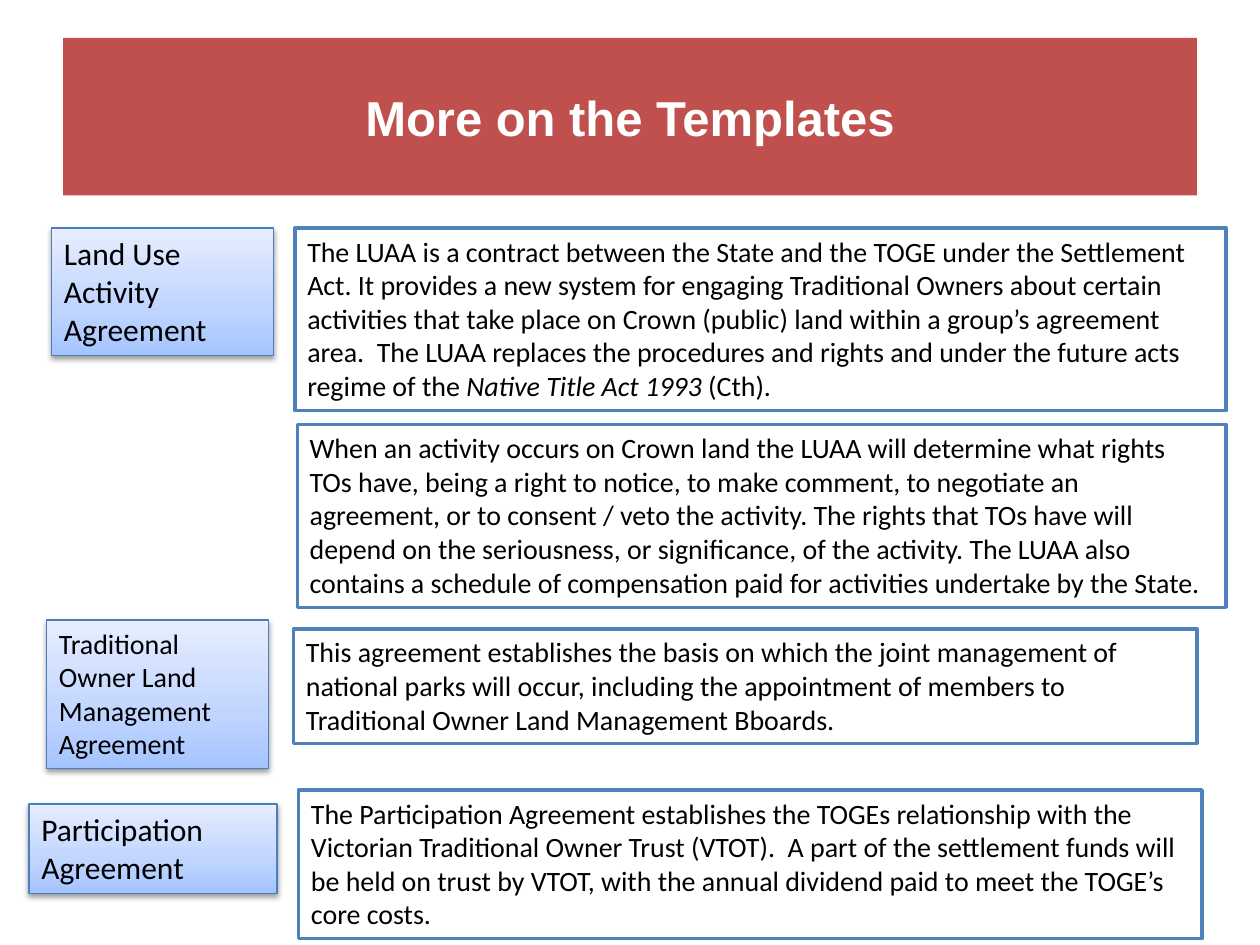
import copy

import pptx
import pptx.dml.color
import pptx.enum.dml
import pptx.enum.shapes
import pptx.enum.text
import pptx.oxml
import pptx.oxml.ns
import pptx.util

RGBColor = pptx.dml.color.RGBColor
BLACK = RGBColor(0x00, 0x00, 0x00)
WHITE = RGBColor(0xFF, 0xFF, 0xFF)
RED = RGBColor(0xC0, 0x50, 0x4D)
BLUE = RGBColor(0x4F, 0x81, 0xBD)
LABEL_EDGE = RGBColor(0x4B, 0x7E, 0xBC)
LABEL_STOPS = [
    (0, RGBColor(0xA4, 0xC4, 0xFF)),
    (0.35, RGBColor(0xBF, 0xD4, 0xFF)),
    (1, RGBColor(0xE6, 0xEE, 0xFF)),
]
COLUMNS, ROWS = 100, 75
SOFT_SHADOW = (
    f'<a:outerShdw {pptx.oxml.ns.nsdecls("a")} blurRad="40000" dist="20000" '
    'dir="5400000" rotWithShape="0"><a:srgbClr val="000000">'
    '<a:alpha val="38000"/></a:srgbClr></a:outerShdw>'
)
LEFT = pptx.enum.text.PP_ALIGN.LEFT
CENTER = pptx.enum.text.PP_ALIGN.CENTER


def write(frame, *pieces, size=16, font="Calibri", color=BLACK, bold=False, align=LEFT):
    frame.word_wrap = True
    paragraph = frame.paragraphs[0]
    paragraph.alignment = align
    for piece in pieces:
        text, italic = piece if isinstance(piece, tuple) else (piece, False)
        run = paragraph.add_run()
        run.text = text
        run.font.size = pptx.util.Pt(size)
        run.font.name = font
        run.font.color.rgb = color
        run.font.bold = bold
        run.font.italic = italic


class AgreementSlide:
    def __init__(self, deck):
        self.column = deck.slide_width / COLUMNS
        self.row = deck.slide_height / ROWS
        self.slide = deck.slides.add_slide(deck.slide_layouts[5])

    def area(self, left, top, width, height):
        return (
            round(left * self.column),
            round(top * self.row),
            round(width * self.column),
            round(height * self.row),
        )

    def title(self, text, *place):
        banner = self.slide.shapes.title
        banner.left, banner.top, banner.width, banner.height = self.area(*place)
        banner.fill.solid()
        banner.fill.fore_color.rgb = RED
        banner.text_frame.vertical_anchor = pptx.enum.text.MSO_ANCHOR.MIDDLE
        write(banner.text_frame, text, size=28, font="Arial", color=WHITE,
              bold=True, align=CENTER)

    def box(self, place, pieces, edge, weight, size):
        box = self.slide.shapes.add_shape(
            pptx.enum.shapes.MSO_SHAPE.RECTANGLE, *self.area(*place))
        box.shadow.inherit = False
        box.line.color.rgb = edge
        box.line.width = pptx.util.Pt(weight)
        frame = box.text_frame
        frame.vertical_anchor = pptx.enum.text.MSO_ANCHOR.TOP
        frame.auto_size = pptx.enum.text.MSO_AUTO_SIZE.SHAPE_TO_FIT_TEXT
        write(frame, *pieces, size=size)
        return box

    def label(self, text, *place, size=18):
        label = self.box(place, [text], LABEL_EDGE, 0.75, size)
        label.fill.gradient()
        label.fill.gradient_angle = 90
        properties = label._element.spPr
        stops = properties.find(".//" + pptx.oxml.ns.qn("a:gsLst"))
        stops.append(copy.deepcopy(stops[0]))
        for stop, (position, color) in zip(label.fill.gradient_stops, LABEL_STOPS):
            stop.position = position
            stop.color.rgb = color
        effects = properties.find(pptx.oxml.ns.qn("a:effectLst"))
        effects.append(pptx.oxml.parse_xml(SOFT_SHADOW))

    def description(self, *pieces, place):
        description = self.box(place, pieces, BLUE, 2, 16)
        description.fill.solid()
        description.fill.fore_color.rgb = WHITE


def main():
    deck = pptx.Presentation()
    deck.slide_width = pptx.util.Inches(10)
    deck.slide_height = pptx.util.Inches(7.5)
    page = AgreementSlide(deck)
    page.title("More on the Templates", 5, 3, 90, 12.5)

    page.label("Traditional Owner Land Management Agreement",
               3.7, 49.2, 17.6, 11.8, size=16)
    page.label("Land Use Activity Agreement", 4.1, 18.1, 17.6, 10.1)
    page.label("Participation Agreement", 2.3, 63.8, 19.7, 7.1)

    page.description(
        "The Participation Agreement establishes the TOGEs relationship with the "
        "Victorian Traditional Owner Trust (VTOT).  A part of the settlement funds "
        "will be held on trust by VTOT, with the annual dividend paid to meet the "
        "TOGE’s core costs.",
        place=(23.7, 62.7, 71.7, 11.8))
    page.description(
        "The LUAA is a contract between the State and the TOGE under the Settlement "
        "Act. It provides a new system for engaging Traditional Owners about certain "
        "activities that take place on Crown (public) land within a group’s agreement "
        "area.  The LUAA replaces the procedures and rights and under the future acts "
        "regime of the ",
        ("Native Title Act 1993 ", True),
        "(Cth).",
        place=(23.4, 18.1, 73.9, 14.5))
    page.description(
        "This agreement establishes the basis on which the joint management of "
        "national parks will occur, including the appointment of members to "
        "Traditional Owner Land Management Bboards.",
        place=(23.3, 49.9, 71.7, 9.1))
    page.description(
        "When an activity occurs on Crown land the LUAA will determine what rights "
        "TOs have, being a right to notice, to make comment, to negotiate an "
        "agreement, or to consent / veto the activity. The rights that TOs have will "
        "depend on the seriousness, or significance, of the activity. The LUAA also "
        "contains a schedule of compensation paid for activities undertake by the "
        "State.",
        place=(23.6, 33.7, 73.7, 14.5))

    deck.save("out.pptx")


if __name__ == "__main__":
    main()
